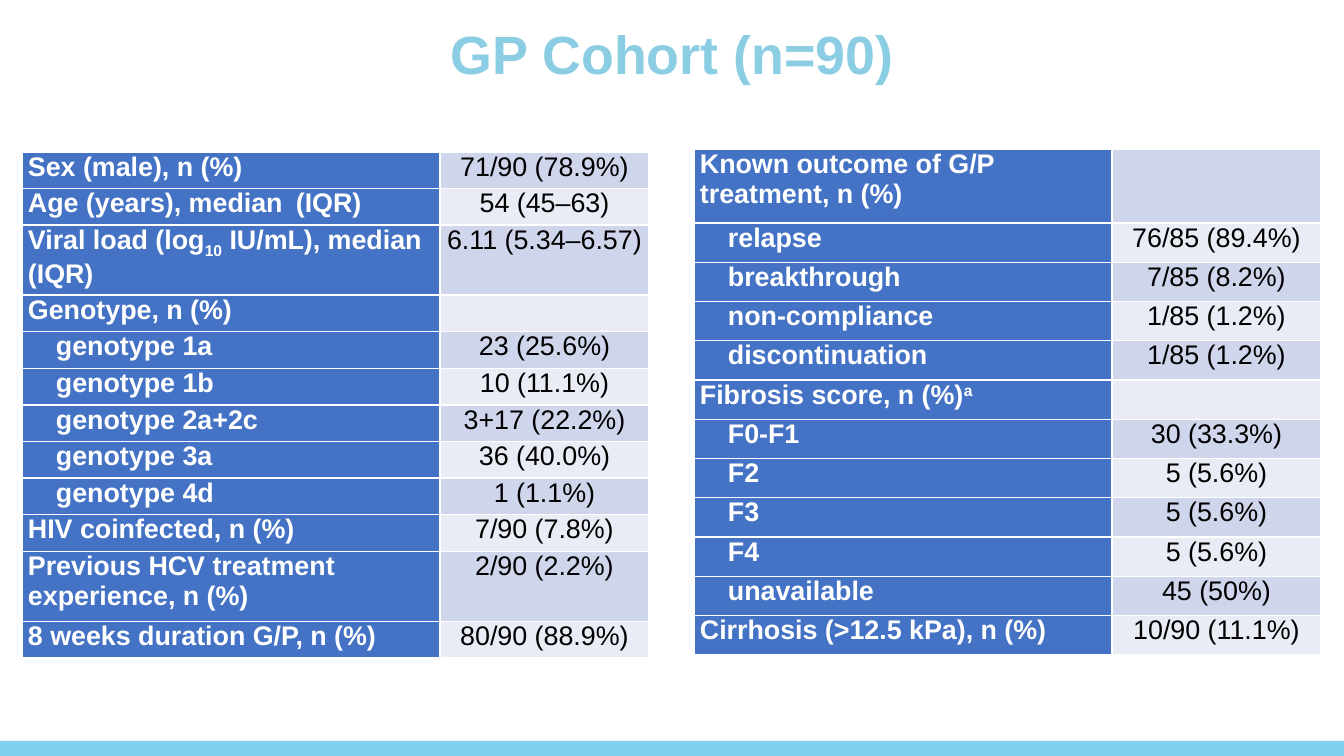
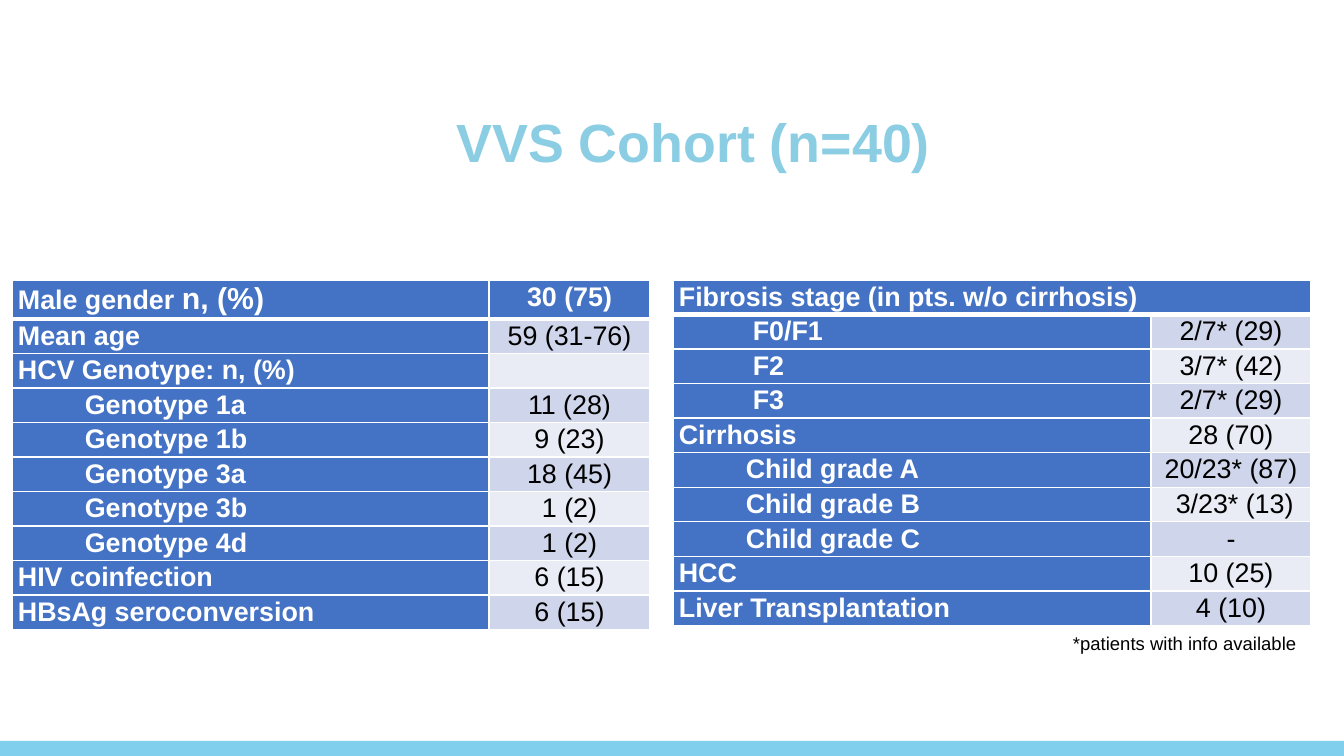
"""Build two slides of cohort characteristics, each with a pair of tables."""
from dataclasses import dataclass, field
from typing import Any, Optional

from lxml.etree import SubElement
from pptx import Presentation
from pptx.dml.color import RGBColor
from pptx.enum.shapes import MSO_SHAPE
from pptx.enum.text import MSO_ANCHOR, MSO_AUTO_SIZE, PP_ALIGN
from pptx.oxml.ns import qn
from pptx.util import Emu, Pt

SCALE = 7557
WIDTH, HEIGHT = 1344, 756
BAND_H = 15
INSET = 6
FONT = "Arial"
WHITE = RGBColor(0xFF, 0xFF, 0xFF)
BLACK = RGBColor(0x00, 0x00, 0x00)
SKY = RGBColor(0x54, 0xC0, 0xE8)
TITLE_BLUE = RGBColor(0x8B, 0xCD, 0xE3)
LABEL_BLUE = RGBColor(0x44, 0x72, 0xC4)
STRIPES = (RGBColor(0xCF, 0xD5, 0xEA), RGBColor(0xE9, 0xEB, 0xF5))

TITLE = {"name": FONT, "size": Pt(32), "bold": True}
LABEL = {"name": FONT, "size": Pt(16), "bold": True}
VALUE = {"name": FONT, "size": Pt(16), "bold": False}
NOTE = {"name": FONT, "size": Pt(11), "bold": False}


@dataclass(frozen=True)
class Part:
    """A piece of text with its own size or baseline."""
    text: str
    size: int = 16
    baseline: int = 0


@dataclass(frozen=True)
class Row:
    """A label and its value; value None spans both columns."""
    label: Any
    value: Optional[str] = ""
    indent: int = 0


@dataclass(frozen=True)
class Grid:
    """A two-column table; tall maps row numbers to their own heights."""
    x: int
    y: int
    cols: tuple
    height: int
    rows: list
    tall: dict = field(default_factory=dict)
    header: bool = False
    para: dict = field(default_factory=dict)


@dataclass(frozen=True)
class Page:
    """A slide with a title box and its tables."""
    title: str
    box: tuple
    grids: tuple
    note: str = ""


def px(n: float) -> Emu:
    """Turn pixels into EMU."""
    return Emu(round(n * SCALE))


def apply(obj: Any, values: dict) -> None:
    """Set attributes from a dict."""
    for name, value in values.items():
        setattr(obj, name, value)


def add_run(p: Any, text: str, fmt: dict, color: RGBColor) -> Any:
    """Add a formatted run."""
    r = p.add_run()
    r.text = text
    apply(r.font, fmt)
    r.font.color.rgb = color
    return r


def add_text(s: Any, box: tuple, text: str, fmt: dict, color: RGBColor,
             frame: dict, para: dict) -> None:
    """Add a text box of one paragraph."""
    tf = s.shapes.add_textbox(*map(px, box)).text_frame
    apply(tf, frame)
    p = tf.paragraphs[0]
    apply(p, para)
    add_run(p, text, fmt, color)


def add_band(s: Any) -> None:
    """Add the translucent band at the foot."""
    sp = s.shapes.add_shape(MSO_SHAPE.RECTANGLE, 0, px(HEIGHT - BAND_H),
                            px(WIDTH), px(BAND_H))
    sp.shadow.inherit = False
    sp.line.fill.background()
    sp.fill.solid()
    sp.fill.fore_color.rgb = SKY
    clr = sp.fill._xPr.find(".//" + qn("a:srgbClr"))
    SubElement(clr, qn("a:alpha"), val="74000")


def style_cell(cell: Any, fill: RGBColor, top: int, bottom: int) -> None:
    """Set margins, white borders and fill."""
    apply(cell, {"margin_left": px(INSET), "margin_right": px(INSET),
                 "margin_top": 0, "margin_bottom": 0})
    tc_pr = cell._tc.get_or_add_tcPr()
    for side, width in (("L", 1), ("R", 1), ("T", top), ("B", bottom)):
        ln = SubElement(tc_pr, qn(f"a:ln{side}"), w=str(Pt(width)))
        paint = SubElement(ln, qn("a:solidFill"))
        SubElement(paint, qn("a:srgbClr"), val=str(WHITE))
    cell.fill.solid()
    cell.fill.fore_color.rgb = fill


def write_label(p: Any, row: Row) -> None:
    """Write the bold white label with its indent."""
    if row.indent:
        pr = p._p.get_or_add_pPr()
        pr.set("marL", str(px(row.indent)))
        pr.set("indent", "0")
    parts = (Part(row.label),) if isinstance(row.label, str) else row.label
    for part in parts:
        r = add_run(p, part.text, {**LABEL, "size": Pt(part.size)}, WHITE)
        if part.baseline:
            r._r.get_or_add_rPr().set("baseline", str(part.baseline * 1000))


def add_grid(s: Any, g: Grid) -> None:
    """Add a table with blue labels and striped values."""
    n = len(g.rows)
    tbl = s.shapes.add_table(n, 2, px(g.x), px(g.y), px(sum(g.cols)),
                             px(g.height)).table
    apply(tbl, {"first_row": g.header, "horz_banding": False})
    for col, width in zip(tbl.columns, g.cols):
        col.width = px(width)
    normal = (g.height - sum(g.tall.values())) / (n - len(g.tall))
    for i, row in enumerate(g.rows):
        tbl.rows[i].height = px(g.tall.get(i, normal))
        head = g.header and i == 0
        top = 3 if g.header and i == 1 else 1
        stripe = LABEL_BLUE if head else STRIPES[(i - g.header) % 2]
        label, value = tbl.cell(i, 0), tbl.cell(i, 1)
        for cell, fill in ((label, LABEL_BLUE), (value, stripe)):
            style_cell(cell, fill, top, 3 if head else 1)
            apply(cell.text_frame.paragraphs[0], g.para)
        write_label(label.text_frame.paragraphs[0], row)
        p = value.text_frame.paragraphs[0]
        p.alignment = PP_ALIGN.CENTER
        if row.value is None:
            label.merge(value)
        elif row.value:
            add_run(p, row.value, LABEL if head else VALUE,
                    WHITE if head else BLACK)
        else:
            SubElement(p._p, qn("a:endParaRPr"), sz="1600")


def add_page(prs: Any, page: Page) -> None:
    """Add one slide."""
    s = prs.slides.add_slide(prs.slide_layouts[6])
    add_band(s)
    add_text(s, page.box, page.title, TITLE, TITLE_BLUE,
             {"word_wrap": True, "vertical_anchor": MSO_ANCHOR.MIDDLE},
             {"alignment": PP_ALIGN.CENTER, "line_spacing": 0.9})
    for g in page.grids:
        add_grid(s, g)
    if page.note:
        add_text(s, (1061, 626, 249, 35), page.note, NOTE, BLACK,
                 {"word_wrap": False,
                  "auto_size": MSO_AUTO_SIZE.SHAPE_TO_FIT_TEXT}, {})


SUB, DEEP, DEEPER = 28, 67, 74
LOOSE = {"line_spacing": 1.07, "space_after": Pt(8)}

GP_BASE = [
    Row("Sex (male), n (%)", "71/90 (78.9%)"),
    Row((Part("Age (years), median"), Part(" ", 12), Part(" (IQR)")),
        "54 (45–63)"),
    Row((Part("Viral load (log"), Part("10", baseline=-25),
         Part(" IU/mL), median (IQR)")), "6.11 (5.34–6.57)"),
    Row("Genotype, n (%)"),
    Row("genotype 1a", "23 (25.6%)", SUB),
    Row("genotype 1b", "10 (11.1%)", SUB),
    Row("genotype 2a+2c", "3+17 (22.2%)", SUB),
    Row("genotype 3a", "36 (40.0%)", SUB),
    Row("genotype 4d", "1 (1.1%)", SUB),
    Row("HIV coinfected, n (%)", "7/90 (7.8%)"),
    Row("Previous HCV treatment experience, n (%)", "2/90 (2.2%)"),
    Row("8 weeks duration G/P, n (%)", "80/90 (88.9%)"),
]
GP_OUTCOME = [
    Row("Known outcome of G/P treatment, n (%)"),
    Row("relapse", "76/85 (89.4%)", SUB),
    Row("breakthrough", "7/85 (8.2%)", SUB),
    Row("non-compliance", "1/85 (1.2%)", SUB),
    Row("discontinuation", "1/85 (1.2%)", SUB),
    Row((Part("Fibrosis score, n (%)"), Part("a", baseline=30))),
    Row("F0-F1", "30 (33.3%)", SUB),
    Row("F2", "5 (5.6%)", SUB),
    Row("F3", "5 (5.6%)", SUB),
    Row("F4", "5 (5.6%)", SUB),
    Row("unavailable", "45 (50%)", SUB),
    Row("Cirrhosis (>12.5 kPa), n (%)", "10/90 (11.1%)"),
]
VVS_BASE = [
    Row((Part("Male gender "), Part("n, (%)", 18)), "30 (75)"),
    Row("Mean age", "59 (31-76)"),
    Row("HCV Genotype: n, (%)"),
    Row("Genotype 1a", "11 (28)", DEEP),
    Row("Genotype 1b", "9 (23)", DEEP),
    Row("Genotype 3a", "18 (45)", DEEP),
    Row("Genotype 3b", "1 (2)", DEEP),
    Row("Genotype 4d", "1 (2)", DEEP),
    Row("HIV coinfection", "6 (15)"),
    Row("HBsAg seroconversion", "6 (15)"),
]
VVS_LIVER = [
    Row("Fibrosis stage (in pts. w/o cirrhosis)", None),
    Row("F0/F1", "2/7* (29)", DEEPER),
    Row("F2", "3/7* (42)", DEEPER),
    Row("F3", "2/7* (29)", DEEPER),
    Row("Cirrhosis", "28 (70)"),
    Row("Child grade A", "20/23* (87)", DEEP),
    Row("Child grade B", " 3/23* (13)", DEEP),
    Row("Child grade C", "-", DEEP),
    Row("HCC", "10 (25)"),
    Row("Liver Transplantation", "4 (10)"),
]
PAGES = (
    Page("GP Cohort (n=90)", (352, 15, 641, 85), (
        Grid(694, 149, (418, 209), 506, GP_OUTCOME, {0: 74}),
        Grid(22, 152, (418, 209), 506, GP_BASE, {2: 70, 10: 70}))),
    Page("VVS Cohort (n=40)", (374, 103, 639, 85), (
        Grid(12, 280, (477, 161), 323, VVS_BASE, {0: 35}, True, LOOSE),
        Grid(673, 280, (478, 160), 331, VVS_LIVER, {}, True, LOOSE)),
         "*patients with info available"),
)


def main() -> None:
    """Build and save the deck."""
    prs = Presentation()
    apply(prs, {"slide_width": px(WIDTH), "slide_height": px(HEIGHT)})
    for page in PAGES:
        add_page(prs, page)
    prs.save("out.pptx")


if __name__ == "__main__":
    main()
